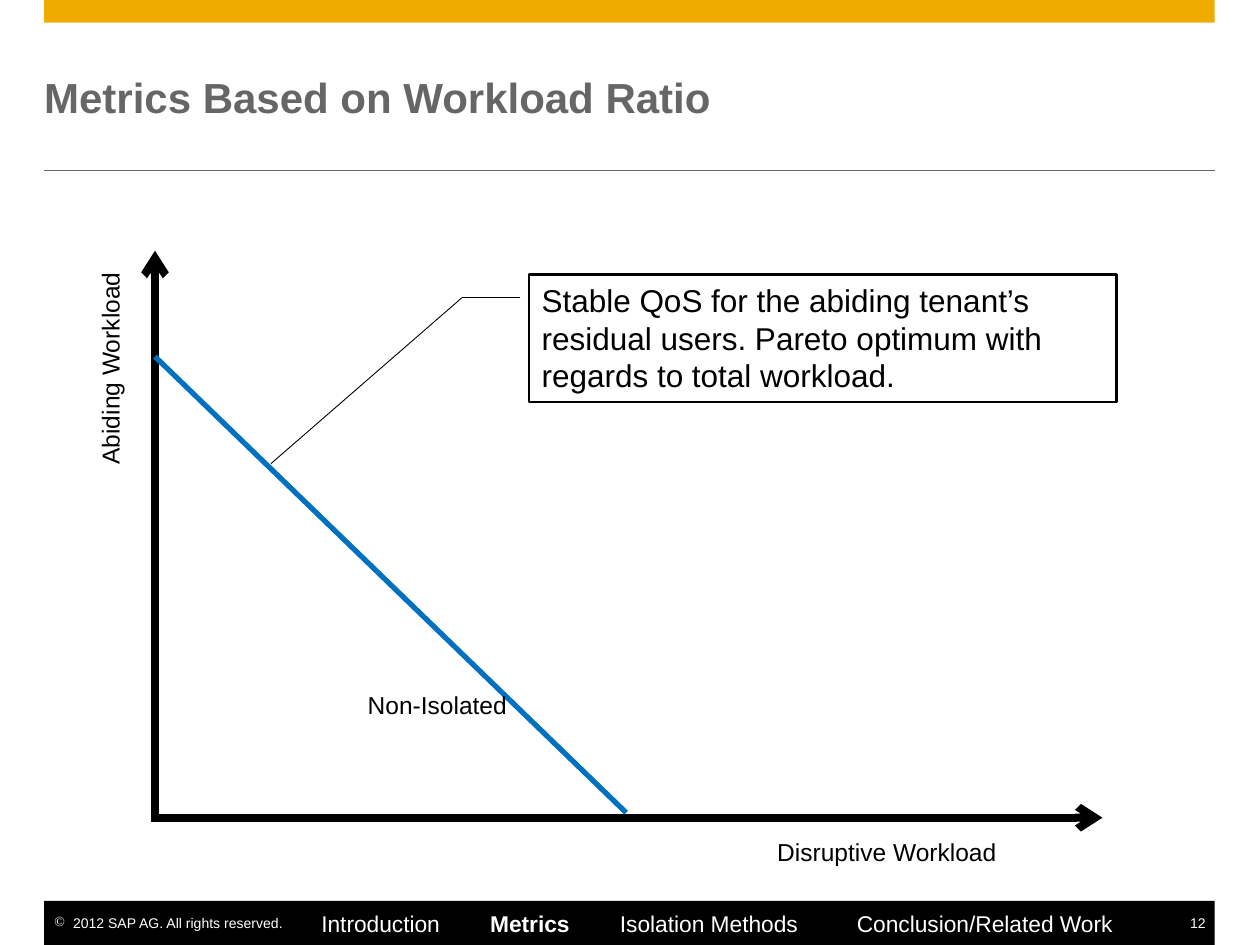
from lxml import etree
from pptx import Presentation
from pptx.dml.color import RGBColor
from pptx.enum.shapes import MSO_CONNECTOR, MSO_SHAPE
from pptx.enum.text import MSO_ANCHOR, PP_ALIGN
from pptx.oxml.ns import qn
from pptx.util import Inches, Pt

STRAIGHT = MSO_CONNECTOR.STRAIGHT
RECT = MSO_SHAPE.RECTANGLE
TOP, MIDDLE = MSO_ANCHOR.TOP, MSO_ANCHOR.MIDDLE
LEFT, RIGHT = PP_ALIGN.LEFT, PP_ALIGN.RIGHT

WIDTH, HEIGHT = Inches(10), Inches(7.5)
COLS, ROWS = 100, 75
MARGIN, CONTENT = 3.5, 92.9
BLACK, WHITE, GREY = "000000", "FFFFFF", "666666"
GOLD, BLUE = "F0AB00", "0070C0"
INSET = (0.1, 0.05, 0.1, 0.05)
FLUSH = (0, 0, 0, 0)


def rgb(color):
    return RGBColor.from_string(color)


def x(cols):
    return int(WIDTH * cols / COLS)


def y(rows):
    return int(HEIGHT * rows / ROWS)


def box(col, row, cols, rows):
    return x(col), y(row), x(cols), y(rows)


def add_rect(s, place, fill, line=None):
    sp = s.shapes.add_shape(RECT, *place)
    sp.shadow.inherit = False
    sp.fill.solid()
    sp.fill.fore_color.rgb = rgb(fill)
    if line:
        sp.line.color.rgb = rgb(line)
        sp.line.width = Pt(1.5)
    else:
        sp.line.fill.background()
    return sp


def add_line(s, start, end, color, width, arrow=False):
    c = s.shapes.add_connector(STRAIGHT, x(start[0]), y(start[1]), x(end[0]), y(end[1]))
    c.line.color.rgb = rgb(color)
    c.line.width = Pt(width)
    if arrow:
        etree.SubElement(c.line._get_or_add_ln(), qn("a:tailEnd"), type="arrow")
    etree.SubElement(c._element.spPr, qn("a:effectLst"))


def write(sp, text, size, color=BLACK, bold=False, inset=INSET, anchor=TOP, align=LEFT, wrap=True):
    tf = sp.text_frame
    tf.word_wrap = wrap
    tf.vertical_anchor = anchor
    tf.margin_left, tf.margin_top, tf.margin_right, tf.margin_bottom = map(Inches, inset)
    p = tf.paragraphs[0]
    p.text = text
    p.alignment = align
    for r in p.runs:
        style(r, size, color, bold)
    return p


def style(r, size, color, bold=False):
    r.font.name = "Arial"
    r.font.size = Pt(size)
    r.font.bold = bold
    r.font.color.rgb = rgb(color)


def add_text(s, place, *args, **kwargs):
    return write(s.shapes.add_textbox(*place), *args, **kwargs)


def add_bullet(p, char, color, indent):
    pPr = p._p.get_or_add_pPr()
    pPr.set("marL", str(Inches(indent)))
    pPr.set("indent", str(-Inches(indent)))
    clr = etree.SubElement(pPr, qn("a:buClr"))
    etree.SubElement(clr, qn("a:srgbClr"), val=color)
    etree.SubElement(pPr, qn("a:buChar"), char=char)


def add_navigation(s, sections, current, stops):
    p = add_text(s, box(25.5, 72.2, 70.1, 2.2), "", 13, inset=FLUSH)
    tabs = etree.SubElement(p._p.get_or_add_pPr(), qn("a:tabLst"))
    for stop in stops:
        etree.SubElement(tabs, qn("a:tab"), pos=str(x(stop)), algn="l")
    for i, section in enumerate(sections):
        r = p.add_run()
        r.text = "\t" + section if i else section
        style(r, 13, WHITE, section == current)


def add_frame(s):
    add_rect(s, box(MARGIN, 0, CONTENT, 1.8), GOLD)
    add_line(s, (MARGIN, 13.5), (MARGIN + CONTENT, 13.5), GREY, 0.5)
    add_rect(s, box(MARGIN, 71.5, CONTENT, 3.5), BLACK)
    p = add_text(s, box(MARGIN, 72.6, 19.3, 1.3), "2012 SAP AG. All rights reserved.", 8, WHITE,
                 inset=(0.08, 0, 0, 0), wrap=False)
    add_bullet(p, "©", WHITE, 0.15)
    add_text(s, box(94.3, 72.6, 2.2, 1.3), "12", 8, WHITE,
             inset=(0, 0, 0.08, 0), align=RIGHT, wrap=False)
    add_text(s, box(MARGIN, 3.5, CONTENT, 8.3), "Metrics Based on Workload Ratio", 24, GREY,
             bold=True, inset=FLUSH, anchor=MIDDLE)


def add_diagram(s):
    add_line(s, (12.3, 65.1), (12.3, 19.9), BLACK, 4.5, arrow=True)
    add_line(s, (12, 64.9), (87.5, 64.9), BLACK, 4.5, arrow=True)
    add_text(s, box(60.7, 65.9, 25.3, 3.4), "Disruptive Workload", 14)
    add_line(s, (12.3, 28.3), (49.7, 64.5), BLUE, 3)
    add_text(s, box(28.2, 54.3, 13.1, 5.7), "Non-Isolated", 14)
    add_text(s, box(-0.2, 27.2, 17.9, 3.4), "Abiding Workload", 14)
    s.shapes[-1].rotation = 270


def add_callout(s, text, points):
    sp = add_rect(s, box(42, 21.8, 46.6, 10.1), WHITE, BLACK)
    write(sp, text, 18)
    for start, end in zip(points, points[1:]):
        add_line(s, start, end, BLACK, 0.5)


def main():
    prs = Presentation()
    prs.slide_width, prs.slide_height = WIDTH, HEIGHT
    s = prs.slides.add_slide(prs.slide_layouts[6])
    add_frame(s)
    add_diagram(s)
    add_callout(s, "Stable QoS for the abiding tenant’s residual users. "
                   "Pareto optimum with regards to total workload.",
                [(41.3, 23.6), (36.7, 23.6), (21.5, 36.8)])
    add_navigation(s, ["Introduction", "Metrics", "Isolation Methods", "Conclusion/Related Work"],
                   "Metrics", [13.4, 23.7, 42.5])
    prs.save("out.pptx")


if __name__ == "__main__":
    main()
